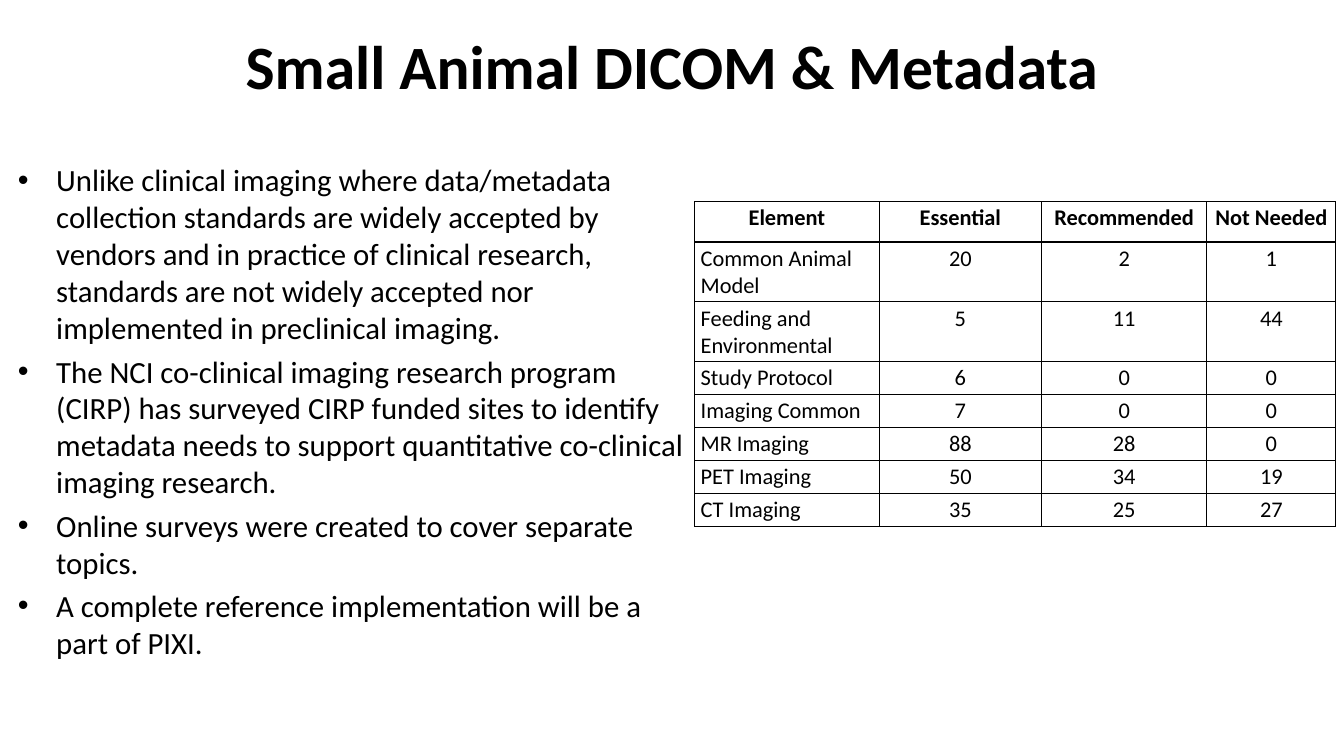
from lxml.etree import SubElement
from pptx import Presentation
from pptx.dml.color import RGBColor
from pptx.enum.text import MSO_ANCHOR as Anchor, PP_ALIGN as Align
from pptx.oxml.ns import qn
from pptx.util import Inches, Pt

FONT = "Calibri"
BLACK = "000000"
TITLE = "Small Animal DICOM & Metadata"
POINTS = [
    "Unlike clinical imaging where data/metadata collection standards are widely accepted by "
    "vendors and in practice of clinical research, standards are not widely accepted nor "
    "implemented in preclinical imaging.",
    "The NCI co-clinical imaging research program (CIRP) has surveyed CIRP funded sites to "
    "identify metadata needs to support quantitative co-clinical imaging research.",
    "Online surveys were created to cover separate topics.",
    "A complete reference implementation will be a part of PIXI.",
]
SURVEY = [
    ("Element", "Essential", "Recommended", "Not Needed"),
    ("Common Animal Model", 20, 2, 1),
    ("Feeding and Environmental", 5, 11, 44),
    ("Study Protocol", 6, 0, 0),
    ("Imaging Common", 7, 0, 0),
    ("MR Imaging", 88, 28, 0),
    ("PET Imaging", 50, 34, 19),
    ("CT Imaging", 35, 25, 27),
]
COLUMN_WIDTHS = (1.83, 1.61, 1.64, 1.28)


def set_color(color, value):
    """Give a color format a hex value."""
    color.rgb = RGBColor.from_string(value)


def style(para, size, bold=False, align=Align.LEFT):
    """Set the font and alignment of a paragraph."""
    para.alignment = align
    para.font.name = FONT
    para.font.size = Pt(size)
    para.font.bold = bold
    set_color(para.font.color, BLACK)


def add_box(page, left, top, width, height):
    """Add a wrapping text box and return its text frame."""
    box = page.shapes.add_textbox(Inches(left), Inches(top), Inches(width), Inches(height))
    box.text_frame.word_wrap = True
    return box.text_frame


def add_title(page, text):
    """Add the centred slide title."""
    frame = add_box(page, 0.67, 0.17, 12, 0.95)
    frame.vertical_anchor = Anchor.MIDDLE
    frame.text = text
    style(frame.paragraphs[0], 44, True, Align.CENTER)


def add_bullets(page, points):
    """Add the bulleted list."""
    frame = add_box(page, 0.08, 1.55, 6.83, 4.95)
    for index, point in enumerate(points):
        para = frame.add_paragraph() if index else frame.paragraphs[0]
        para.text = point
        properties = para._p.get_or_add_pPr()
        properties.set("marL", str(Inches(0.38)))
        properties.set("indent", str(-Inches(0.38)))
        SubElement(properties, qn("a:buFont"), typeface="Arial")
        SubElement(properties, qn("a:buChar"), char="•")
        if index:
            para.space_before = Pt(4.5)
        style(para, 22)


def add_borders(cell):
    """Draw a thin line on each side of a cell."""
    properties = cell._tc.get_or_add_tcPr()
    for position, side in enumerate(("lnL", "lnR", "lnT", "lnB")):
        line = properties.makeelement(qn(f"a:{side}"), {"w": str(Pt(1))})
        fill = SubElement(line, qn("a:solidFill"))
        SubElement(fill, qn("a:srgbClr"), val=BLACK)
        properties.insert(position, line)


def fill_cell(cell, text, bold, align):
    """Write and format one table cell."""
    cell.fill.background()
    cell.margin_left = cell.margin_right = Inches(0.06)
    cell.margin_top = cell.margin_bottom = Inches(0.03)
    cell.text = text
    style(cell.text_frame.paragraphs[0], 16, bold, align)
    add_borders(cell)


def add_survey_table(page, rows, widths):
    """Add the table of survey counts."""
    table = page.shapes.add_table(
        len(rows), len(widths), Inches(6.89), Inches(2), Inches(sum(widths)), Inches(2.29)
    ).table
    for column, width in zip(table.columns, widths):
        column.width = Inches(width)
    for r, values in enumerate(rows):
        table.rows[r].height = Inches(0.27 if r else 0.4)
        for c, value in enumerate(values):
            align = Align.LEFT if r and not c else Align.CENTER
            fill_cell(table.cell(r, c), str(value), r == 0, align)


def main():
    """Build and save the slide."""
    deck = Presentation()
    deck.slide_width, deck.slide_height = Inches(13.33), Inches(7.5)
    page = deck.slides.add_slide(deck.slide_layouts[6])
    add_bullets(page, POINTS)
    add_title(page, TITLE)
    add_survey_table(page, SURVEY, COLUMN_WIDTHS)
    deck.save("out.pptx")


if __name__ == "__main__":
    main()
